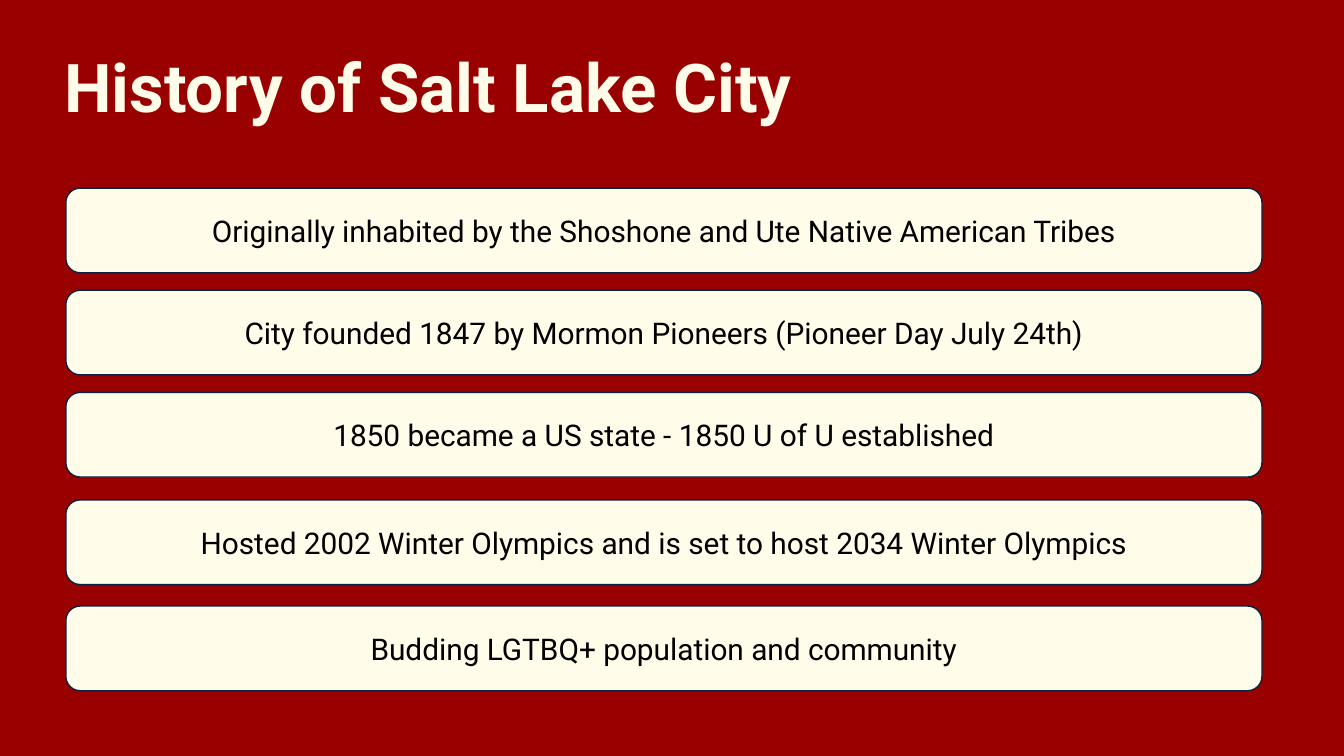
from pptx import Presentation
from pptx.dml.color import RGBColor
from pptx.enum.shapes import MSO_SHAPE
from pptx.enum.text import MSO_ANCHOR, MSO_AUTO_SIZE, PP_ALIGN
from pptx.util import Inches, Pt

ROUND = MSO_SHAPE.ROUNDED_RECTANGLE
TOP, MIDDLE = MSO_ANCHOR.TOP, MSO_ANCHOR.MIDDLE
LEFT, CENTER = PP_ALIGN.LEFT, PP_ALIGN.CENTER
RED, CREAM, NAVY, BLACK = "990000", "FFFCE9", "0B213F", "000000"


def paint(fill, color):
    """Make a fill solid in a hex colour."""
    fill.solid()
    fill.fore_color.rgb = RGBColor.from_string(color)


def write(shape, text, size, color, bold, align, anchor):
    frame = shape.text_frame
    frame.word_wrap = True
    frame.auto_size = MSO_AUTO_SIZE.NONE
    frame.vertical_anchor = anchor
    frame.margin_left = frame.margin_right = Inches(0.1)
    frame.margin_top = frame.margin_bottom = Inches(0.1)
    para = frame.paragraphs[0]
    para.alignment = align
    run = para.add_run()
    run.text = text
    run.font.name = "Roboto"
    run.font.size = Pt(size)
    run.font.bold = bold
    paint(run.font.fill, color)


deck = Presentation()
deck.slide_width = Inches(10)
deck.slide_height = deck.slide_width * 9 // 16
slide = deck.slides.add_slide(deck.slide_layouts[5])
paint(slide.background.fill, RED)

title = slide.shapes.title
title.left, title.top = Inches(0.38), Inches(0.24)
title.width, title.height = Inches(6.85), Inches(0.8)
write(title, "History of Salt Lake City", 36, CREAM, True, LEFT, TOP)

# Each fact with the gap below its bar
facts = [
    ("Originally inhabited by the Shoshone and Ute Native American Tribes", 0.13),
    ("City founded 1847 by Mormon Pioneers (Pioneer Day July 24th)", 0.13),
    ("1850 became a US state - 1850 U of U established", 0.17),
    ("Hosted 2002 Winter Olympics and is set to host 2034 Winter Olympics", 0.16),
    ("Budding LGTBQ+ population and community", 0),
]
height = 0.63
top = 1.4
for fact, gap in facts:
    bar = slide.shapes.add_shape(
        ROUND, Inches(0.49), Inches(top), Inches(8.9), Inches(height))
    bar.shadow.inherit = False
    bar.adjustments[0] = 0.17
    paint(bar.fill, CREAM)
    paint(bar.line.fill, NAVY)
    bar.line.width = Pt(0.75)
    write(bar, fact, 16, BLACK, False, CENTER, MIDDLE)
    top += height + gap

deck.save("out.pptx")
